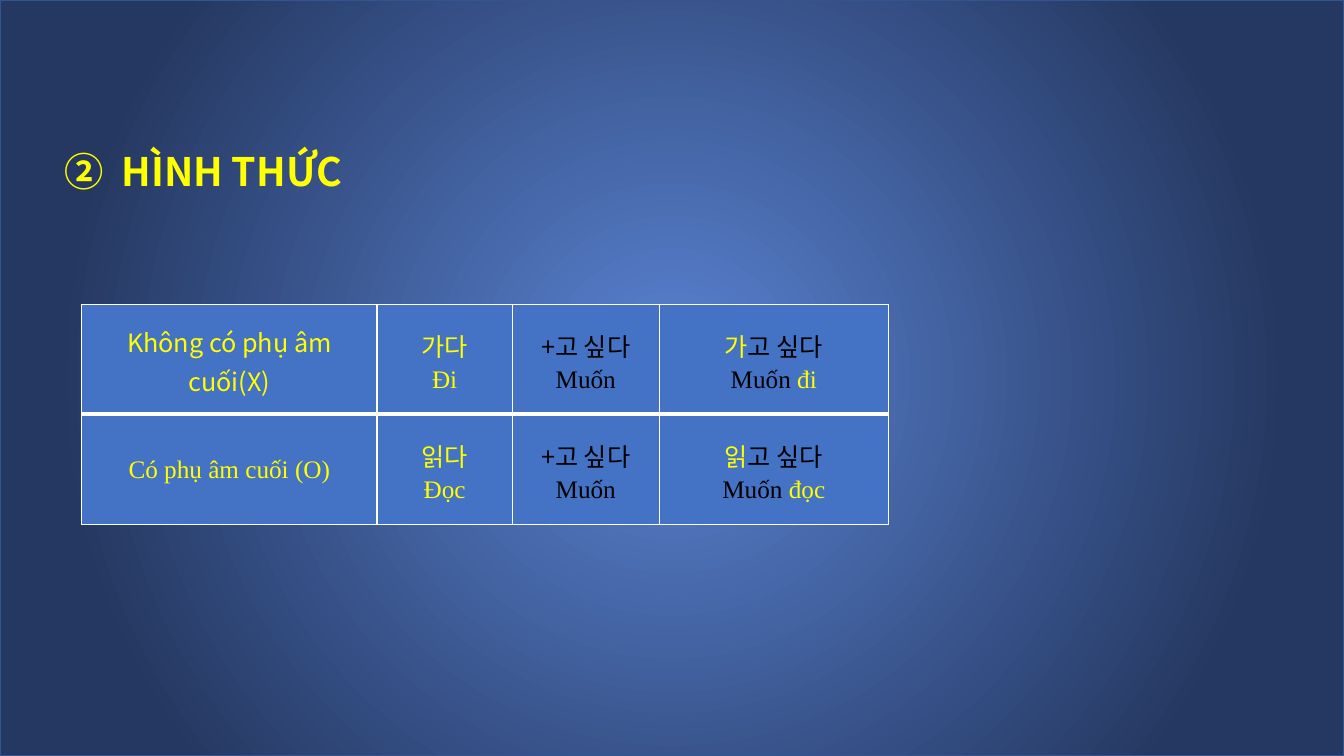
"""Build a slide on the form of a Korean verb ending, with a two-row table."""
from dataclasses import dataclass

from lxml import etree
from pptx import Presentation
from pptx.dml.color import RGBColor
from pptx.enum.shapes import MSO_SHAPE
from pptx.enum.text import MSO_ANCHOR, MSO_AUTO_SIZE, PP_ALIGN
from pptx.oxml.ns import qn
from pptx.util import Inches, Pt

RECT = MSO_SHAPE.RECTANGLE
MIDDLE = MSO_ANCHOR.MIDDLE
GROW = MSO_AUTO_SIZE.SHAPE_TO_FIT_TEXT
CENTER, JUSTIFY = PP_ALIGN.CENTER, PP_ALIGN.JUSTIFY

UNIT = Inches(0.01)
COLS, ROWS = 1333, 750
SANS, SERIF = "Noto Sans CJK KR", "Times New Roman"
COLORS = {
    "glow": "5A83D3", "edge": "253861", "frame": "325491",
    "cell": "4472C4", "rule": "FFFFFF", "key": "FFFF00", "text": "000000",
}


@dataclass
class Part:
    text: str
    color: str = "key"
    font: str = SANS
    size: int = 18
    bold: bool = False


Line = list[Part]


def grid(count: int) -> int:
    """Turn grid steps into a length."""
    return count * UNIT


def tint(name: str) -> RGBColor:
    """Look up a colour by name."""
    return RGBColor.from_string(COLORS[name])


def write(frame, lines: list[Line], align: PP_ALIGN, after: int = 0) -> None:
    """Fill a text frame with lines of styled runs."""
    for index, line in enumerate(lines):
        para = frame.add_paragraph() if index else frame.paragraphs[0]
        para.alignment = align
        para.line_spacing = 1.07
        para.space_before, para.space_after = Pt(0), Pt(after)
        for part in line:
            run = para.add_run()
            run.text = part.text
            font = run.font
            font.name, font.size, font.bold = part.font, Pt(part.size), part.bold
            font.color.rgb = tint(part.color)
            east = etree.SubElement(run._r.get_or_add_rPr(), qn("a:ea"))
            east.set("typeface", part.font)


def border(cell, side: str, width: int) -> None:
    """Draw one side of a table cell."""
    line = etree.SubElement(cell._tc.get_or_add_tcPr(), qn(f"a:ln{side}"), w=str(Pt(width)))
    fill = etree.SubElement(line, qn("a:solidFill"))
    etree.SubElement(fill, qn("a:srgbClr"), val=COLORS["rule"])


def backdrop(slide) -> None:
    """Cover the slide with a round gradient behind everything."""
    shape = slide.shapes.add_shape(RECT, 0, 0, grid(COLS), grid(ROWS))
    shape.shadow.inherit = False
    shape.line.color.rgb = tint("frame")
    shape.line.width = Pt(1)
    shape.fill.gradient()
    stops = zip(shape.fill.gradient_stops, ("glow", "edge"), (0, 0.8))
    for stop, name, place in stops:
        stop.color.rgb = tint(name)
        stop.position = place
    grad = shape._element.spPr.find(qn("a:gradFill"))
    grad.remove(grad.find(qn("a:lin")))
    focus = etree.SubElement(grad, qn("a:path"), path="circle")
    sides = dict.fromkeys("ltrb", "50000")
    etree.SubElement(focus, qn("a:fillToRect"), sides)
    slide.shapes._spTree.insert(2, shape._element)


def heading(slide) -> None:
    """Place and style the title."""
    title = slide.shapes.title
    title.left, title.top = grid(54), grid(138)
    title.width, title.height = grid(314), grid(61)
    frame = title.text_frame
    frame.word_wrap = False
    frame.auto_size = GROW
    frame.vertical_anchor = MSO_ANCHOR.TOP
    write(frame, [[Part("②  HÌNH THỨC", size=28, bold=True)]], JUSTIFY, 8)


def forms(label: Part, stem: str, verb: str, sense: str) -> list[list[Line]]:
    """Give the four cells of one verb's row."""
    want = "Muốn"
    return [
        [[label]],
        [[Part(verb)], [Part(sense.capitalize(), font=SERIF)]],
        [[Part("+고 싶다", "text")], [Part(want, "text", SERIF)]],
        [[Part(stem), Part("고 싶다", "text")],
         [Part(f"{want} ", "text", SERIF), Part(sense, font=SERIF)]],
    ]


def chart(slide) -> None:
    """Draw the table of verb forms."""
    rows = [
        forms(Part("Không có phụ âm cuối(X)"), "가", "가다", "đi"),
        forms(Part("Có phụ âm cuối (O)", font=SERIF), "읽", "읽다", "đọc"),
    ]
    widths, height = (293, 134, 146, 227), 109
    table = slide.shapes.add_table(
        len(rows), len(widths), grid(81), grid(302),
        grid(sum(widths)), grid(height * len(rows))).table
    table.first_row = table.horz_banding = False
    for column, width in zip(table.columns, widths):
        column.width = grid(width)
    for index, row in enumerate(rows):
        table.rows[index].height = grid(height)
        thick = "B" if index == 0 else "T"
        for col, lines in enumerate(row):
            cell = table.cell(index, col)
            cell.vertical_anchor = MIDDLE
            cell.margin_left = cell.margin_right = grid(7)
            cell.margin_top = cell.margin_bottom = 0
            for side in "LRTB":
                border(cell, side, 3 if side == thick else 1)
            cell.fill.solid()
            cell.fill.fore_color.rgb = tint("cell")
            write(cell.text_frame, lines, CENTER)


def main() -> None:
    """Build and save the slide."""
    deck = Presentation()
    deck.slide_width, deck.slide_height = grid(COLS), grid(ROWS)
    slide = deck.slides.add_slide(deck.slide_layouts.get_by_name("Title Only"))
    backdrop(slide)
    heading(slide)
    chart(slide)
    deck.save("out.pptx")


if __name__ == "__main__":
    main()
